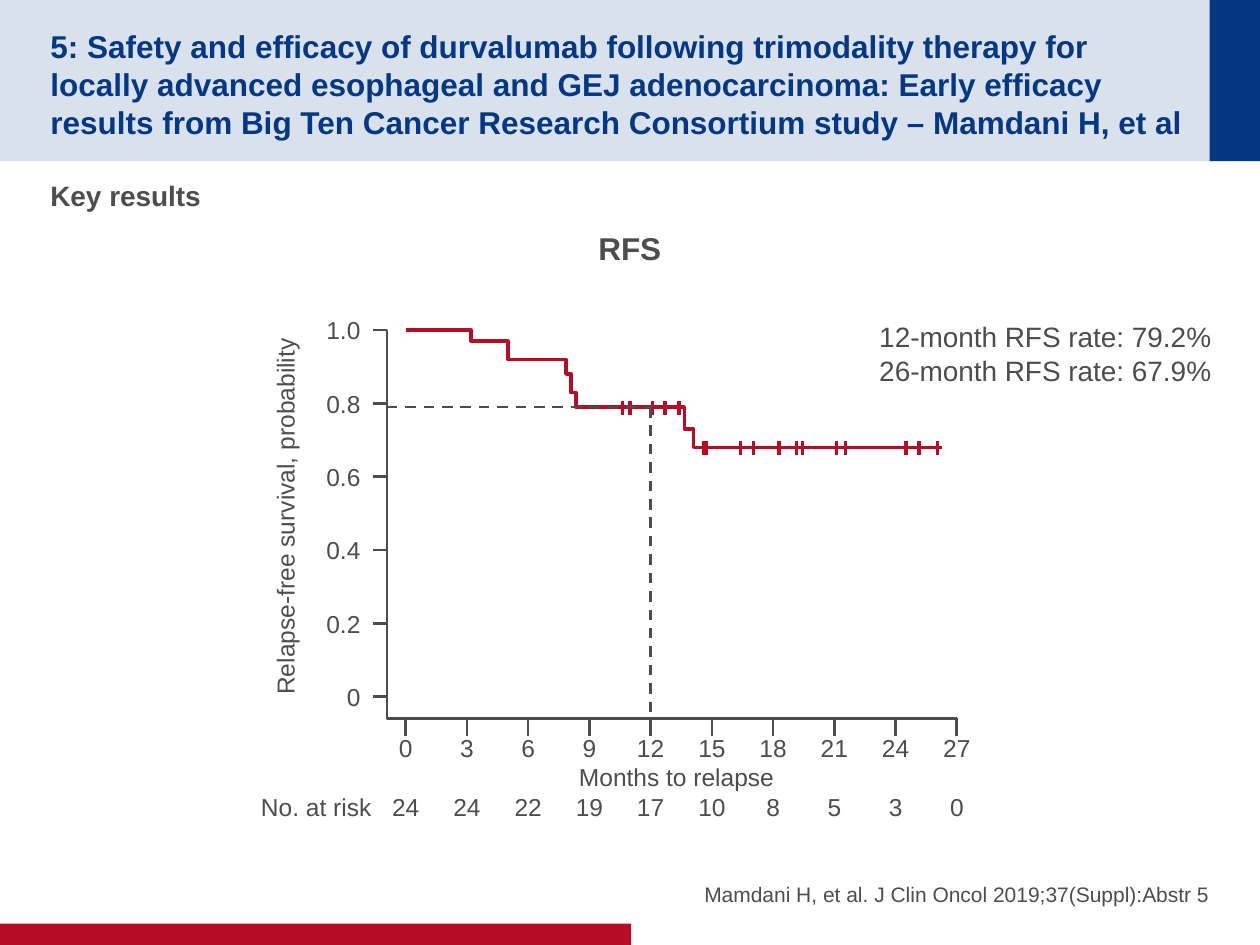
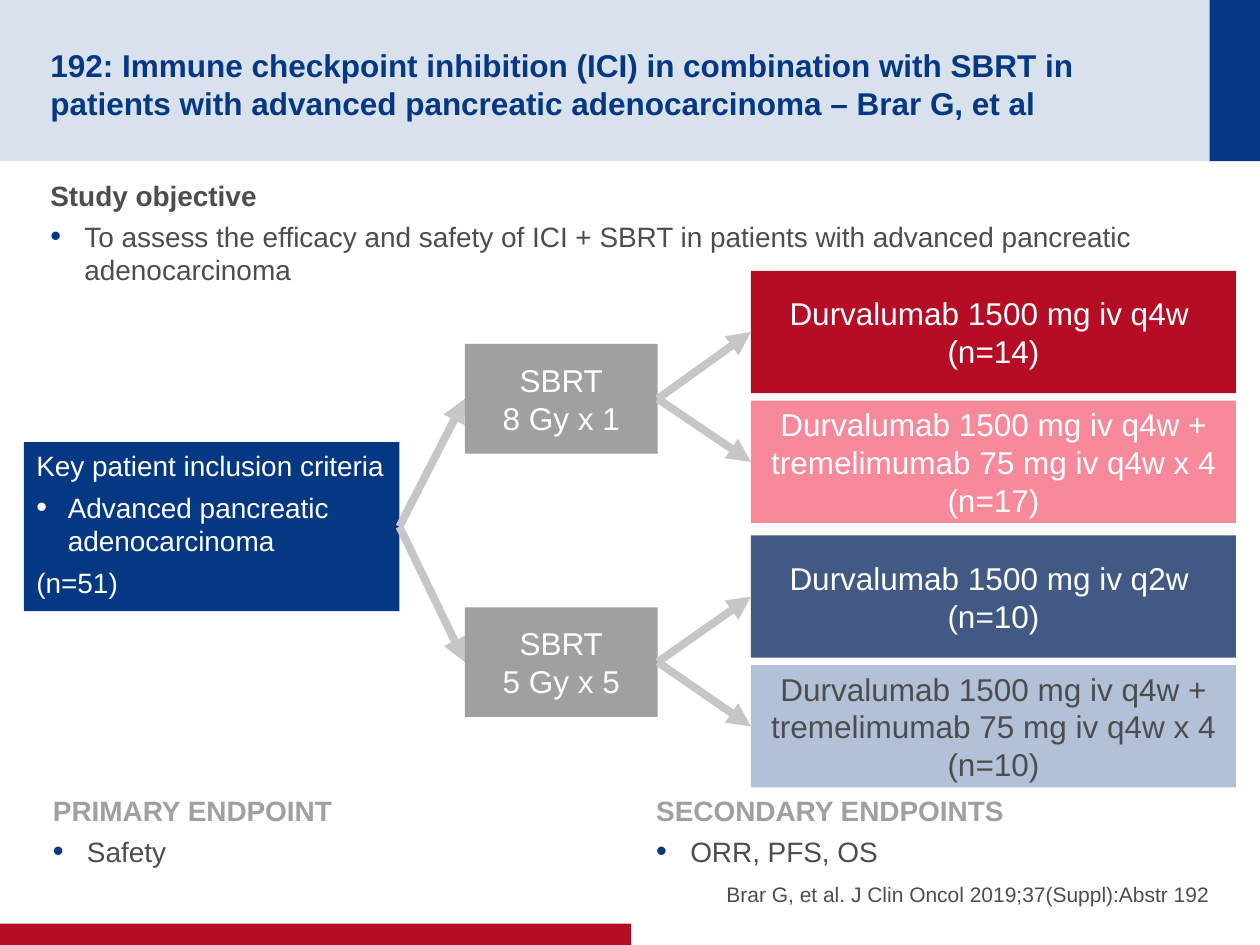
from lxml.etree import SubElement
from pptx import Presentation
from pptx.dml.color import RGBColor
from pptx.enum.dml import MSO_LINE
from pptx.enum.shapes import MSO_CONNECTOR, MSO_SHAPE
from pptx.enum.text import MSO_ANCHOR, PP_ALIGN
from pptx.oxml.ns import qn
from pptx.util import Inches, Pt

C = {"navy": "043882", "band": "D9E1EC", "red": "B60D27", "pink": "F7899A",
     "slate": "425A83", "ice": "B2C0D8", "gray": "A0A0A0", "arrow": "C6C6C6",
     "text": "4D4D4D", "white": "FFFFFF"}
ALIGN = {"l": PP_ALIGN.LEFT, "c": PP_ALIGN.CENTER, "r": PP_ALIGN.RIGHT}
ANCHOR = {"t": MSO_ANCHOR.TOP, "m": MSO_ANCHOR.MIDDLE, "b": MSO_ANCHOR.BOTTOM}

prs = Presentation()
prs.slide_width, prs.slide_height = Inches(10), Inches(7.5)
CELL = prs.slide_width // 100
COLS, ROWS = 100, 75


def text(s, box, *paras, size=16, color="text", bold=False, align="l", anchor="t",
         fill=None, inset=(1, 0.5, 1, 0.5), wrap=True, after=0, rotation=0):
    x, y, w, h = [int(v * CELL) for v in box]
    if fill:
        sp = s.shapes.add_shape(MSO_SHAPE.RECTANGLE, x, y, w, h)
        sp.shadow.inherit = False
        sp.fill.solid()
        sp.fill.fore_color.rgb = RGBColor.from_string(C[fill])
        sp.line.fill.background()
    else:
        sp = s.shapes.add_textbox(x, y, w, h)
    sp.rotation = rotation
    tf = sp.text_frame
    tf.word_wrap = wrap
    tf.vertical_anchor = ANCHOR[anchor]
    tf.margin_left, tf.margin_top, tf.margin_right, tf.margin_bottom = [
        int(v * CELL) for v in inset]
    for i, para in enumerate(paras):
        words, own = para if isinstance(para, tuple) else (para, {})
        p = tf.paragraphs[0] if i == 0 else tf.add_paragraph()
        p.alignment = ALIGN[align]
        p.space_after = Pt(after)
        if "indent" in own:
            indent = int(own["indent"] * CELL)
            pPr = p._p.get_or_add_pPr()
            pPr.set("marL", str(indent))
            pPr.set("indent", str(-indent))
            SubElement(SubElement(pPr, qn("a:buClr")), qn("a:srgbClr"), val=C[own["bullet"]])
            SubElement(pPr, qn("a:buSzPct"), val="110000")
            SubElement(pPr, qn("a:buFont"), typeface="Arial")
            SubElement(pPr, qn("a:buChar"), char="•")
        for j, part in enumerate(words.split("\n")):
            if j:
                p.add_line_break()
            r = p.add_run()
            r.text = part
            r.font.name = "Arial"
            r.font.size = Pt(size)
            r.font.bold = own.get("bold", bold)
            r.font.color.rgb = RGBColor.from_string(C[own.get("color", color)])


def line(s, *points, color="text", width=1.5, dash=False, arrow=False):
    pts = [(int(x * CELL), int(y * CELL)) for x, y in points]
    if len(pts) == 2:
        sp = s.shapes.add_connector(MSO_CONNECTOR.STRAIGHT, *pts[0], *pts[1])
    else:
        fb = s.shapes.build_freeform(*pts[0])
        fb.add_line_segments(pts[1:], close=False)
        sp = fb.convert_to_shape()
        sp.fill.background()
    sp.line.color.rgb = RGBColor.from_string(C[color])
    sp.line.width = Pt(width)
    if dash:
        sp.line.dash_style = MSO_LINE.DASH
    if arrow:
        SubElement(sp.line._get_or_add_ln(), qn("a:tailEnd"), type="triangle")
    SubElement(sp._element.spPr, qn("a:effectLst"))


HEADINGS = [
    ("5: Safety and efficacy of durvalumab following trimodality therapy for locally advanced "
     "esophageal and GEJ adenocarcinoma: Early efficacy results from Big Ten Cancer Research "
     "Consortium study – Mamdani H, et al",
     "Mamdani H, et al. J Clin Oncol 2019;37(Suppl):Abstr 5"),
    ("192: Immune checkpoint inhibition (ICI) in combination with SBRT in patients with "
     "advanced pancreatic adenocarcinoma – Brar G, et al",
     "Brar G, et al. J Clin Oncol 2019;37(Suppl):Abstr 192"),
]
BULLET = {"indent": 2.7, "bullet": "navy", "bold": False, "color": "text"}
BODY = (4, 13.7, 92, 51.9)
BODY_INSET = (0, 0.5, 0, 0.5)

slides = []
for title, citation in HEADINGS:
    s = prs.slides.add_slide(prs.slide_layouts[6])
    text(s, (0, 0, COLS, 12.8), fill="band")
    text(s, (COLS - 4, 0, 4, 12.8), fill="navy")
    text(s, (0, ROWS - 1.7, 50.1, 1.7), fill="red")
    text(s, (4, 2, 90.1, 8.8), title, size=18, color="navy", bold=True, anchor="m",
         inset=(0, 0.5, 0, 0))
    text(s, (50.8, 66.7, 45.2, 5.3), citation, size=12, align="r", anchor="b",
         inset=(0, 0, 0, 0), after=4)
    slides.append(s)

s = slides[0]
X0, MONTH = 32.2, 1.62
Y0, FULL = 55.3, 29.1
AXIS_X, AXIS_Y = 30.7, 57
END_X = X0 + 27 * MONTH

text(s, BODY, "Key results", bold=True, inset=BODY_INSET, after=4)
text(s, (46.5, 17.7, 7.1, 4), "RFS", size=18, bold=True, wrap=False)
line(s, (AXIS_X, Y0 - FULL), (AXIS_X, AXIS_Y), (END_X, AXIS_Y))

for i, label in enumerate(["0", "0.2", "0.4", "0.6", "0.8", "1.0"]):
    y = Y0 - i * FULL / 5
    line(s, (AXIS_X - 1.1, y), (AXIS_X, y))
    text(s, (24.9, y - 1.7, 4.7, 3.4), label, size=14, align="r", anchor="m", wrap=False)

for i, at_risk in enumerate([24, 24, 22, 19, 17, 10, 8, 5, 3, 0]):
    x = X0 + 3 * i * MONTH
    line(s, (x, AXIS_Y), (x, AXIS_Y + 1.4))
    for y, value in ((57.7, 3 * i), (62.4, at_risk)):
        text(s, (x - 2.1, y, 4.2, 3.4), str(value), size=14, align="c", wrap=False)

for box, label, turn in [((7.5, 39.3, 30.3, 3.4), "Relapse-free survival, probability", 270),
                         ((44.9, 60, 17.6, 3.4), "Months to relapse", 0),
                         ((19.7, 62.4, 10.8, 3.4), "No. at risk", 0)]:
    text(s, box, label, size=14, align="c", wrap=False, rotation=turn)

CENSORED = {0.79: [10.62, 11, 12.1, 12.7, 13.4],
            0.68: [14.58, 14.7, 16.4, 17.05, 18.3, 19.15, 19.45, 21.1, 21.55,
                   24.5, 25.15, 26.05]}
for survival, months in CENSORED.items():
    for month in months:
        x, y = X0 + month * MONTH, Y0 - survival * FULL
        line(s, (x, y - 0.5), (x, y + 0.6), color="red", width=2)

DROPS = [(3.2, 0.97), (5, 0.92), (7.85, 0.88), (8.1, 0.83), (8.35, 0.79),
         (13.65, 0.73), (14.1, 0.68), (26.25, 0.68)]
curve = [(X0, Y0 - FULL)]
for month, survival in DROPS:
    x = X0 + month * MONTH
    curve += [(x, curve[-1][1]), (x, Y0 - survival * FULL)]
line(s, *curve, color="red", width=2)

x, y = X0 + 12 * MONTH, Y0 - 0.79 * FULL
line(s, (AXIS_X, y), (x, y), dash=True)
line(s, (x, y), (x, AXIS_Y), dash=True)
text(s, (68.8, 24.9, 28.7, 6.4), "12-month RFS rate: 79.2%", "26-month RFS rate: 67.9%",
     wrap=False)

s = slides[1]
text(s, BODY, "Study objective",
     ("To assess the efficacy and safety of ICI + SBRT in patients with advanced pancreatic "
      "adenocarcinoma", BULLET), bold=True, inset=BODY_INSET, after=4)
for x, inset, heading, endpoint in [
        (4.2, BODY_INSET, "PRIMARY ENDPOINT", "Safety"),
        (51.1, (1, 0.5, 1, 0.5), "SECONDARY ENDPOINTS", "ORR, PFS, OS")]:
    text(s, (x, 62.5, 45.2, 8.2), heading, (endpoint, BULLET), color="gray", bold=True,
         inset=inset, after=4)

text(s, (1.9, 35.1, 29.8, 13.4), "Key patient inclusion criteria",
     ("Advanced pancreatic adenocarcinoma", {"indent": 2.5, "bullet": "white"}),
     "(n=51)", color="white", fill="navy", after=4.8)

ARMS = [
    ("8 Gy x 1", 27.3, [
        (21.5, "Durvalumab 1500 mg iv q4w \n(n=14)", "red", "white"),
        (31.8, "Durvalumab 1500 mg iv q4w + tremelimumab 75 mg iv q4w x 4 (n=17)",
         "pink", "white")]),
    ("5 Gy x 5", 48.2, [
        (42.5, "Durvalumab 1500 mg iv q2w \n(n=10)", "slate", "white"),
        (52.8, "Durvalumab 1500 mg iv q4w + tremelimumab 75 mg iv q4w x 4 (n=10)",
         "ice", "text")]),
]
for dose, top, treatments in ARMS:
    middle = top + 4.35
    line(s, (31.7, 41.8), (36.9, middle), color="arrow", width=4.5, arrow=True)
    text(s, (36.9, top, 15.3, 8.7), "SBRT\n" + dose, size=18, color="white", align="c",
         anchor="m", fill="gray", inset=(1, 0, 1, 0))
    for y, regimen, fill, color in treatments:
        text(s, (59.6, y, 38.5, 9.7), regimen, size=18, color=color, align="c", anchor="m",
             fill=fill, inset=(0.4, 0, 0.4, 0), after=12)
        line(s, (52.2, middle), (59.6, y + 4.85), color="arrow", width=4.5, arrow=True)

prs.save("out.pptx")
